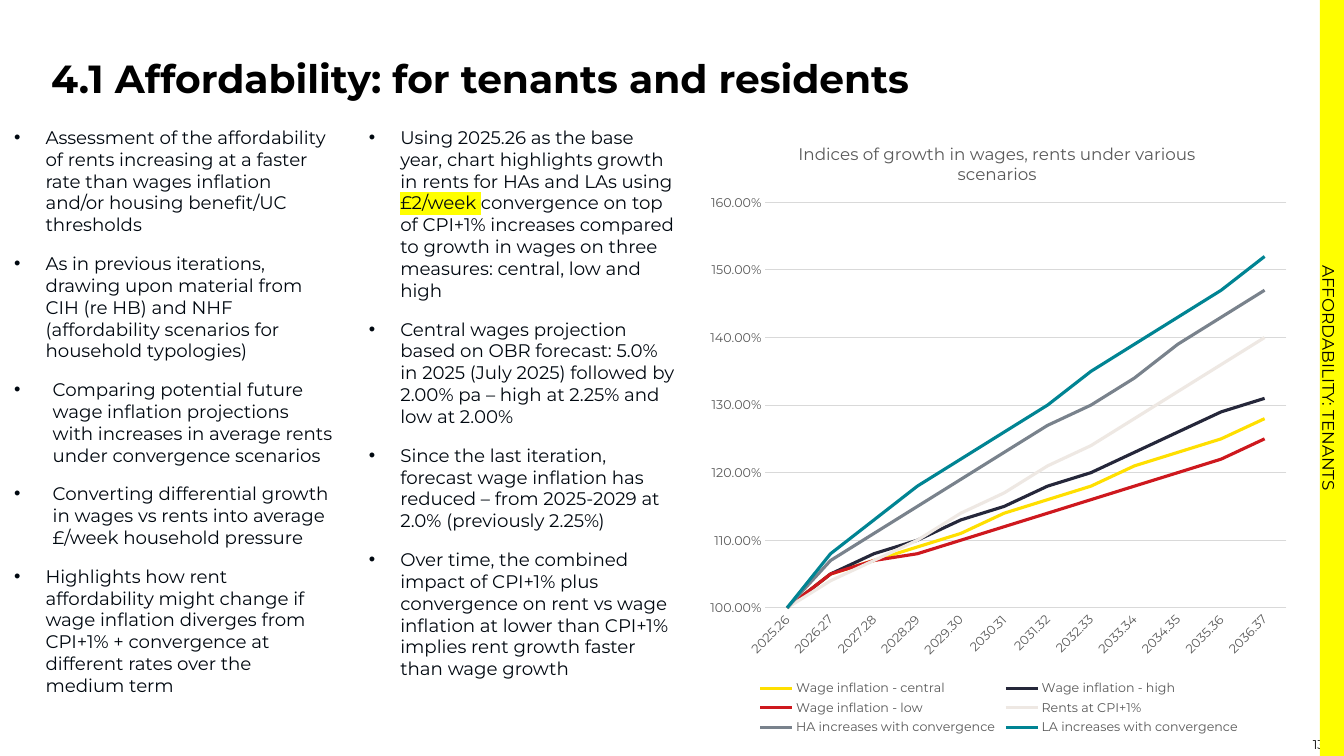
from lxml import etree
from pptx import Presentation
from pptx.chart.data import CategoryChartData
from pptx.dml.color import RGBColor
from pptx.enum.chart import XL_CHART_TYPE, XL_LEGEND_POSITION, XL_TICK_MARK
from pptx.enum.shapes import MSO_SHAPE
from pptx.enum.text import MSO_ANCHOR, PP_ALIGN
from pptx.oxml.ns import qn
from pptx.util import Cm, Pt

LINE_CHART = XL_CHART_TYPE.LINE
LEGEND_BOTTOM = XL_LEGEND_POSITION.BOTTOM
NO_TICKS = XL_TICK_MARK.NONE
RECTANGLE = MSO_SHAPE.RECTANGLE
TOP, MIDDLE = MSO_ANCHOR.TOP, MSO_ANCHOR.MIDDLE
LEFT, CENTER, RIGHT = PP_ALIGN.LEFT, PP_ALIGN.CENTER, PP_ALIGN.RIGHT

FONT = "Montserrat"
COLORS = {
    "black": "000000", "body": "000810", "yellow": "FFFF00", "label": "595959", "grid": "D9D9D9",
    "gold": "FFDF00", "navy": "25273A", "red": "CE181E",
    "cream": "EEE8E3", "grey": "79828C", "teal": "008493",
}

TITLE = "4.1 Affordability: for tenants and residents"
SECTION = "AFFORDABILITY: TENANTS"
PAGE_NUMBER = "13"
HIGHLIGHTED = "£2/week "
NARROW, WIDE = 0.79, 0.97
COLUMNS = [
    ((0.36, 3.18, 8.03, 15.27), [
        (NARROW, ["Assessment of the affordability of rents increasing at a faster rate than wages "
                  "inflation and/or housing benefit/UC thresholds"]),
        (NARROW, ["As in previous iterations, drawing upon material from CIH (re HB) and NHF "
                  "(affordability scenarios for household typologies)"]),
        (WIDE, ["Comparing potential future wage inflation projections with increases in average "
                "rents under convergence scenarios"]),
        (WIDE, ["Converting differential growth in wages vs rents into average £/week household "
                "pressure"]),
        (NARROW, ["Highlights how rent affordability might change if wage inflation diverges from "
                  "CPI+1% + convergence at different rates over the medium term"]),
    ]),
    ((9.3, 3.18, 7.7, 14.96), [
        (NARROW, ["Using 2025.26 as the base year, chart highlights growth in rents for HAs and LAs "
                  "using ", HIGHLIGHTED,
                  "convergence on top of CPI+1% increases compared to growth in wages on three "
                  "measures: central, low and high"]),
        (NARROW, ["Central wages projection based on OBR forecast: 5.0% in 2025 (July 2025) followed "
                  "by 2.00% pa – high at 2.25% and low at 2.00%"]),
        (NARROW, ["Since the last iteration, forecast wage inflation has reduced – from 2025-2029 "
                  "at 2.0% (previously 2.25%)"]),
        (NARROW, ["Over time, the combined impact of CPI+1% plus convergence on rent vs wage "
                  "inflation at lower than CPI+1% implies rent growth faster than wage growth"]),
    ]),
]

CHART_TITLE = "Indices of growth in wages, rents under various scenarios"
YEARS = [f"{year}.{year - 1999}" for year in range(2025, 2037)]
SERIES = [
    ("Wage inflation - central", "gold",
     (1, 1.05, 1.07, 1.09, 1.11, 1.14, 1.16, 1.18, 1.21, 1.23, 1.25, 1.28)),
    ("Wage inflation - high", "navy",
     (1, 1.05, 1.08, 1.1, 1.13, 1.15, 1.18, 1.2, 1.23, 1.26, 1.29, 1.31)),
    ("Wage inflation - low", "red",
     (1, 1.05, 1.07, 1.08, 1.1, 1.12, 1.14, 1.16, 1.18, 1.2, 1.22, 1.25)),
    ("Rents at CPI+1%", "cream",
     (1, 1.04, 1.07, 1.1, 1.14, 1.17, 1.21, 1.24, 1.28, 1.32, 1.36, 1.4)),
    ("HA increases with convergence", "grey",
     (1, 1.07, 1.11, 1.15, 1.19, 1.23, 1.27, 1.3, 1.34, 1.39, 1.43, 1.47)),
    ("LA increases with convergence", "teal",
     (1, 1.08, 1.13, 1.18, 1.22, 1.26, 1.3, 1.35, 1.39, 1.43, 1.47, 1.52)),
]


def color(name):
    return RGBColor.from_string(COLORS[name])


def set_font(font, size, color_name, bold=False):
    font.name, font.size, font.bold = FONT, Pt(size), bold
    font.color.rgb = color(color_name)


def set_line(line, color_name, width):
    line.color.rgb = color(color_name)
    line.width = Pt(width)


def add_text_box(slide, box):
    frame = slide.shapes.add_textbox(*map(Cm, box)).text_frame
    frame.word_wrap = True
    return frame


def write_line(frame, text, size, color_name, alignment, anchor, bold=False):
    frame.vertical_anchor = anchor
    paragraph = frame.paragraphs[0]
    paragraph.text = text
    paragraph.alignment = alignment
    set_font(paragraph.font, size, color_name, bold)
    return paragraph


def add_bullet(paragraph, indent, texts):
    properties = paragraph._p.get_or_add_pPr()
    properties.set("marL", str(Cm(indent)))
    properties.set("indent", str(-Cm(indent)))
    etree.SubElement(properties, qn("a:buFont"), typeface="Arial")
    etree.SubElement(properties, qn("a:buChar"), char="•")
    paragraph.space_after = Pt(12)
    set_font(paragraph.font, 13, "body")
    for text in texts:
        run = paragraph.add_run()
        run.text = text
        if text == HIGHLIGHTED:
            highlight = etree.SubElement(run._r.get_or_add_rPr(), qn("a:highlight"))
            etree.SubElement(highlight, qn("a:srgbClr"), val=COLORS["yellow"])


def add_column(slide, box, bullets):
    frame = add_text_box(slide, box)
    frame.margin_left = frame.margin_right = frame.margin_top = frame.margin_bottom = 0
    for number, (indent, texts) in enumerate(bullets):
        paragraph = frame.add_paragraph() if number else frame.paragraphs[0]
        add_bullet(paragraph, indent, texts)


def set_layout(element, position, **values):
    for old_layout in element.findall(qn("c:layout")):
        element.remove(old_layout)
    layout = etree.Element(qn("c:layout"))
    element.insert(position, layout)
    manual = etree.SubElement(layout, qn("c:manualLayout"))
    for tag, value in values.items():
        etree.SubElement(manual, qn(f"c:{tag}"), val=str(value))


def add_growth_chart(slide, box):
    data = CategoryChartData(number_format="0.00%")
    data.categories = YEARS
    for name, _, values in SERIES:
        data.add_series(name, values)
    chart = slide.shapes.add_chart(LINE_CHART, *map(Cm, box), data).chart
    set_font(chart.font, 10, "black")

    chart.has_title = True
    write_line(chart.chart_title.text_frame, CHART_TITLE, 12, "label", CENTER, TOP)
    chart.has_legend = True
    chart.legend.position = LEGEND_BOTTOM
    chart.legend.include_in_layout = False
    set_font(chart.legend.font, 9, "label")

    for axis in (chart.category_axis, chart.value_axis):
        axis.major_tick_mark = axis.minor_tick_mark = NO_TICKS
        set_font(axis.tick_labels.font, 9, "label")
    set_line(chart.category_axis.format.line, "grid", 0.75)
    label_properties = chart.category_axis._element.find(qn("c:txPr"))
    label_properties.find(qn("a:bodyPr")).set("rot", "-2700000")
    value_axis = chart.value_axis
    value_axis.minimum_scale, value_axis.maximum_scale, value_axis.major_unit = 1, 1.6, 0.1
    value_axis.tick_labels.number_format = "0.00%"
    value_axis.tick_labels.number_format_is_linked = False
    value_axis.format.line.fill.background()
    set_line(value_axis.major_gridlines.format.line, "grid", 0.75)

    plot = chart.plots[0]
    plot.vary_by_categories = False
    for series, (_, color_name, _) in zip(plot.series, SERIES):
        series.smooth = False
        set_line(series.format.line, color_name, 2.25)

    plot_area = next(chart._element.iter(qn("c:plotArea")))
    set_layout(plot_area, 0, layoutTarget="inner", xMode="edge", yMode="edge",
               x=0.11, y=0.14, w=0.87, h=0.65)
    set_layout(chart.chart_title._element, 1, xMode="edge", yMode="edge", x=0.16, y=0.04)
    set_layout(chart.legend._element, 1, xMode="edge", yMode="edge", x=0.09, y=0.9, w=0.82, h=0.1)


def main():
    presentation = Presentation()
    presentation.slide_width, presentation.slide_height = Cm(33.87), Cm(19.05)
    slide = presentation.slides.add_slide(presentation.slide_layouts[6])

    title = write_line(add_text_box(slide, (1.04, 1.37, 30.2, 1.07)), TITLE, 28, "black",
                       LEFT, TOP, bold=True)
    title.line_spacing = 0.9
    write_line(add_text_box(slide, (32.33, 18.47, 1.3, 0.58)), PAGE_NUMBER, 9, "black",
               RIGHT, MIDDLE)

    strip = slide.shapes.add_shape(RECTANGLE, *map(Cm, (24.04, 9.22, 19.05, 0.61)))
    strip.rotation = 90
    strip.shadow.inherit = False
    strip.fill.solid()
    strip.fill.fore_color.rgb = color("yellow")
    strip.line.fill.background()
    write_line(strip.text_frame, SECTION, 12, "black", CENTER, TOP)

    for box, bullets in COLUMNS:
        add_column(slide, box, bullets)
    add_growth_chart(slide, (17.63, 2.9, 15.09, 15.72))
    presentation.save("out.pptx")


if __name__ == "__main__":
    main()
